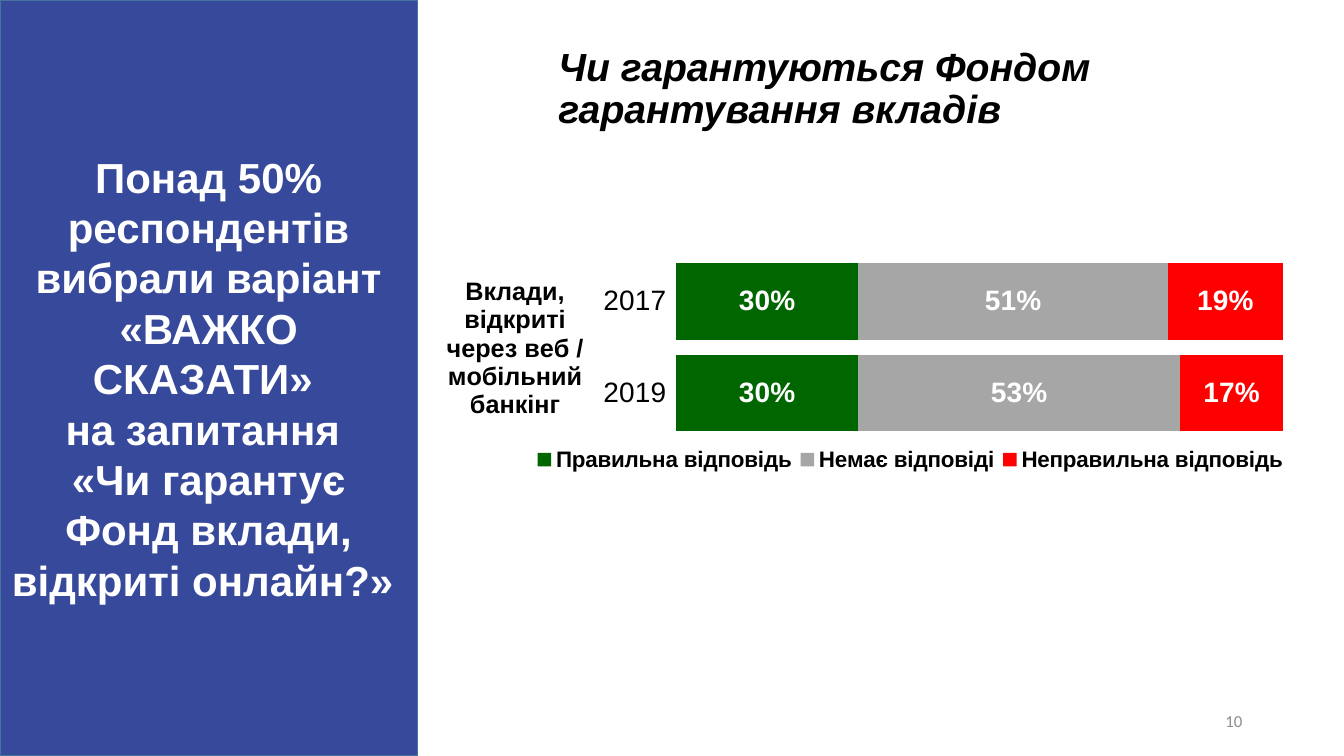
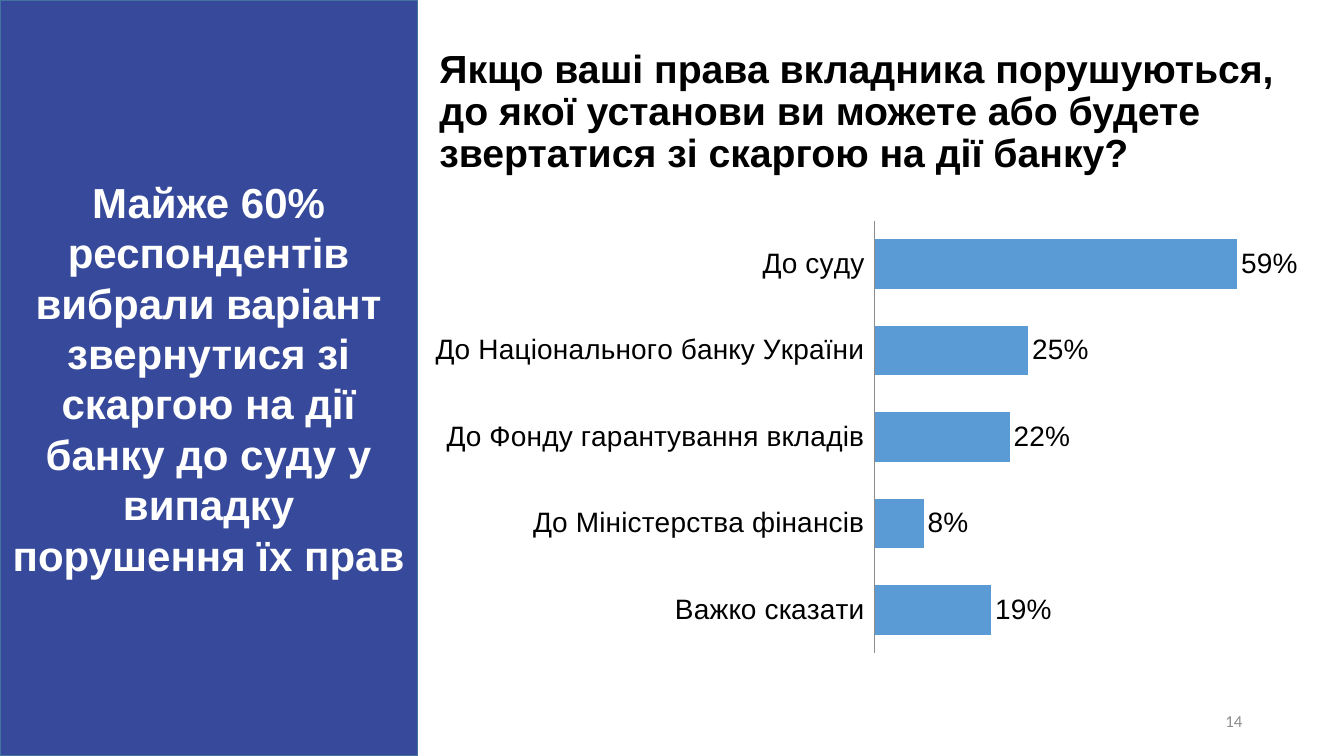
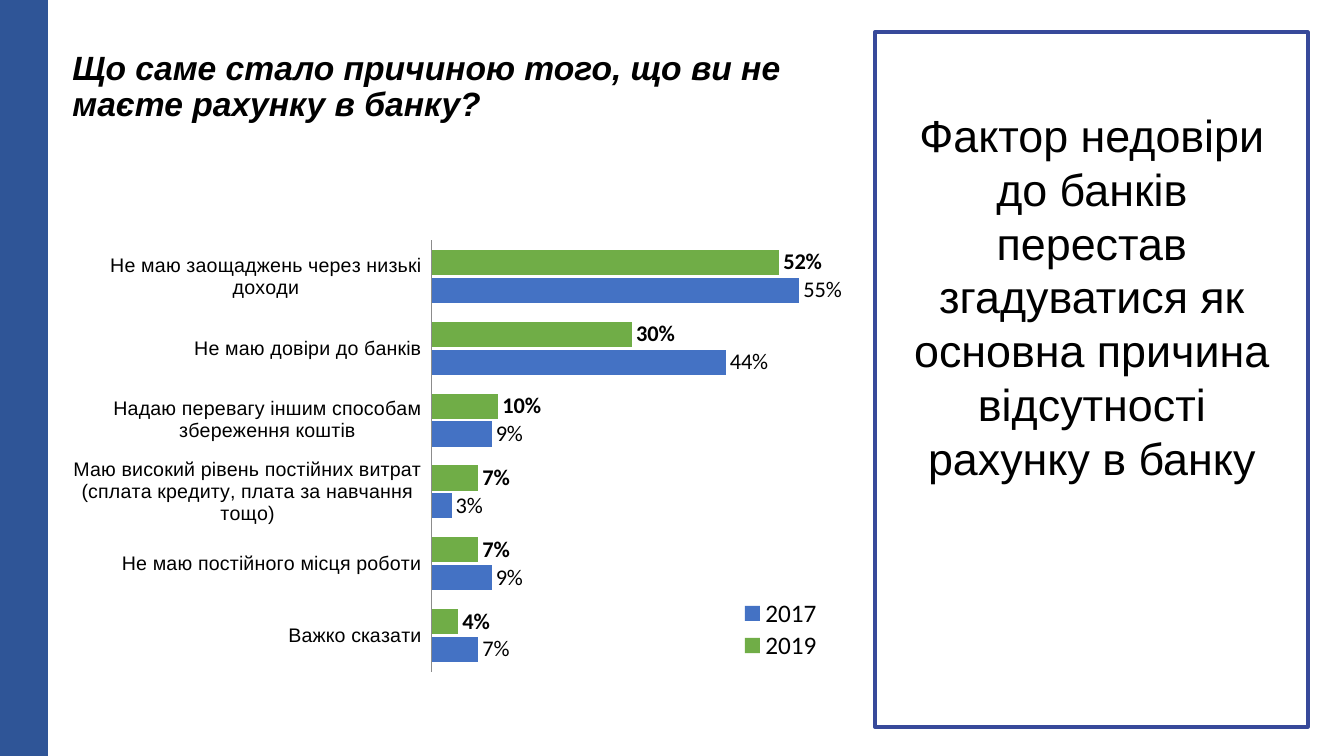
from lxml.etree import SubElement
from pptx import Presentation
from pptx.chart.data import CategoryChartData
from pptx.dml.color import RGBColor
from pptx.enum.chart import XL_CHART_TYPE as ChartType
from pptx.enum.chart import XL_LABEL_POSITION as LabelPos
from pptx.enum.chart import XL_LEGEND_POSITION as LegendPos
from pptx.enum.chart import XL_TICK_LABEL_POSITION as TickLabels
from pptx.enum.chart import XL_TICK_MARK as Tick
from pptx.enum.shapes import MSO_SHAPE as Shape
from pptx.enum.text import MSO_ANCHOR as Anchor
from pptx.enum.text import PP_ALIGN as Align
from pptx.oxml.ns import qn
from pptx.util import Inches, Pt

# Shared colours
BLACK = RGBColor(0x00, 0x00, 0x00)
WHITE = RGBColor(0xFF, 0xFF, 0xFF)
PANEL = RGBColor(0x37, 0x49, 0x9A)
PANEL_EDGE = RGBColor(0x43, 0x73, 0x9E)
STRIPE = RGBColor(0x2F, 0x55, 0x97)
MUTED = RGBColor(0x8C, 0x8C, 0x8C)
CORRECT = RGBColor(0x00, 0x66, 0x00)
NO_ANSWER = RGBColor(0xA6, 0xA6, 0xA6)
WRONG = RGBColor(0xFF, 0x00, 0x00)
LIGHT_BLUE = RGBColor(0x5B, 0x9B, 0xD5)
BLUE = RGBColor(0x44, 0x72, 0xC4)
GREEN = RGBColor(0x70, 0xAD, 0x47)

SLIDE_WIDTH, SLIDE_HEIGHT = 13.33, 7.5
PANEL_WIDTH = 4.14

# Shared text formats
TITLE = {"name": "Arial", "size": 28, "bold": True, "color": BLACK}
PANEL_TEXT = {"name": "Arial", "size": 30, "bold": True, "color": WHITE}
NUMBER = {"name": "Calibri", "size": 12, "color": MUTED}
CHART_TEXT = {"name": "Arial", "size": 20, "bold": False, "color": BLACK}


def set_font(font, values):
    for key, value in values.items():
        if key == "color":
            font.color.rgb = value
        else:
            setattr(font, key, Pt(value) if key == "size" else value)


def fill_text(frame, paragraphs, values, **layout):
    """Write paragraphs; layout holds paragraph attributes such as alignment."""
    frame.word_wrap = True
    for index, text in enumerate(paragraphs):
        para = frame.paragraphs[0] if index == 0 else frame.add_paragraph()
        para.text = text
        for key, value in layout.items():
            setattr(para, key, value)
        for span in para.runs:
            set_font(span.font, values)


def add_text(page, at, text, values, **layout):
    box = page.shapes.add_textbox(*map(Inches, at))
    fill_text(box.text_frame, [text], values, **layout)
    return box


def add_rectangle(page, at, fill, line, line_width):
    box = page.shapes.add_shape(Shape.RECTANGLE, *map(Inches, at))
    box.shadow.inherit = False
    if fill is None:
        box.fill.background()
    else:
        box.fill.solid()
        box.fill.fore_color.rgb = fill
    box.line.color.rgb = line
    box.line.width = Pt(line_width)
    return box


def add_title(page, at, text, **changes):
    add_text(page, at, text, TITLE | changes, line_spacing=0.9)


def add_side_panel(page, paragraphs):
    panel = add_rectangle(page, (0, 0, PANEL_WIDTH, SLIDE_HEIGHT), PANEL, PANEL_EDGE, 1)
    panel.text_frame.vertical_anchor = Anchor.MIDDLE
    fill_text(panel.text_frame, paragraphs, PANEL_TEXT, alignment=Align.CENTER)


def add_page_number(page, number):
    box = add_text(page, (9.42, 6.95, 3, 0.4), number, NUMBER, alignment=Align.RIGHT)
    box.text_frame.vertical_anchor = Anchor.MIDDLE


def place(part, inner=False, **position):
    """Give a chart part a manual layout in fractions of the chart."""
    layout = part.find(qn("c:layout"))
    if layout is None:
        layout = SubElement(part, qn("c:layout"))
        part.insert(0 if inner else 1, layout)
    for child in list(layout):
        layout.remove(child)
    manual = SubElement(layout, qn("c:manualLayout"))
    if inner:
        SubElement(manual, qn("c:layoutTarget")).set("val", "inner")
    for key in ("x", "y"):
        SubElement(manual, qn(f"c:{key}Mode")).set("val", "edge")
    for key, value in position.items():
        SubElement(manual, qn(f"c:{key}")).set("val", str(value))


def add_bar_chart(page, at, kind, categories, series, gap, overlap, maximum,
                  label_pos, axis_font=CHART_TEXT, axis_line=None, plot_area=None):
    """Series are (name, values, colour, label format) tuples."""
    data = CategoryChartData(number_format="0%")
    data.categories = categories
    for name, values, _, _ in series:
        data.add_series(name, values)
    chart = page.shapes.add_chart(kind, *map(Inches, at), data).chart
    chart.has_title = False
    chart.has_legend = False
    set_font(chart.font, CHART_TEXT)

    # Axes
    axis = chart.category_axis
    axis.reverse_order = True
    axis.has_major_gridlines = False
    axis.major_tick_mark = axis.minor_tick_mark = Tick.NONE
    axis.tick_label_position = TickLabels.LOW
    set_font(axis.tick_labels.font, axis_font)
    if axis_line is None:
        axis.format.line.fill.background()
    else:
        axis.format.line.color.rgb = MUTED
        axis.format.line.width = Pt(axis_line)
    scale = chart.value_axis
    scale.visible = False
    scale.has_major_gridlines = False
    scale.minimum_scale, scale.maximum_scale = 0, maximum

    # Bars and labels
    plot = chart.plots[0]
    plot.gap_width, plot.overlap = gap, overlap
    plot.vary_by_categories = False
    for bars, (_, _, color, label_font) in zip(plot.series, series):
        bars.invert_if_negative = False
        bars.format.fill.solid()
        bars.format.fill.fore_color.rgb = color
        labels = bars.data_labels
        labels.show_value = True
        labels.number_format = "0%"
        labels.number_format_is_linked = False
        labels.position = label_pos
        set_font(labels.font, label_font)
    if plot_area:
        place(plot._element.getparent(), inner=True, **plot_area)
    return chart


def add_legend(chart, side, values, **position):
    chart.has_legend = True
    chart.legend.position = side
    chart.legend.include_in_layout = False
    set_font(chart.legend.font, values)
    place(chart.legend._element, **position)


def add_axis_title(axis, text, values, **position):
    title = axis.axis_title
    fill_text(title.text_frame, [text], values)
    body = title.text_frame._txBody.bodyPr
    body.set("rot", "0")
    body.set("vert", "horz")
    place(title._element, **position)


def build_online_deposits(page):
    add_page_number(page, "10")
    add_side_panel(page, [
        "Понад 50% респондентів вибрали варіант «ВАЖКО СКАЗАТИ» ",
        "на запитання \v«Чи гарантує Фонд вклади, відкриті онлайн?» ",
    ])
    add_title(page, (5.44, 0.42, 7.96, 0.72),
              "Чи гарантуються Фондом гарантування вкладів", italic=True)
    label = CHART_TEXT | {"bold": True, "color": WHITE}
    chart = add_bar_chart(
        page, (4.3, 2.51, 8.6, 2.37), ChartType.BAR_STACKED_100, ["2017", "2019"],
        [("Правильна відповідь", (0.3, 0.3), CORRECT, label),
         ("Немає відповіді", (0.51, 0.53), NO_ANSWER, label),
         ("Неправильна відповідь", (0.19, 0.17), WRONG, label)],
        gap=20, overlap=100, maximum=1, label_pos=LabelPos.CENTER,
        plot_area={"x": 0.28, "y": 0.01, "w": 0.7, "h": 0.77})
    bold = CHART_TEXT | {"bold": True}
    add_axis_title(chart.category_axis, "Вклади, відкриті через веб / мобільний банкінг",
                   bold | {"size": 18}, x=0.01, y=0.07)
    add_legend(chart, LegendPos.BOTTOM, bold | {"size": 16}, x=0.11, y=0.8, w=0.88, h=0.13)


def build_complaints(page):
    add_page_number(page, "14")
    add_side_panel(page, ["Майже 60% респондентів вибрали варіант звернутися зі скаргою "
                          "на дії банку до суду у випадку порушення їх прав"])
    add_title(page, (4.26, 0.44, 8.72, 0.61),
              "Якщо ваші права вкладника порушуються, до якої установи ви можете "
              "або будете звертатися зі скаргою на дії банку?")
    add_bar_chart(
        page, (4.14, 2.1, 8.98, 4.47), ChartType.BAR_CLUSTERED,
        ["До суду", "До Національного банку України", "До Фонду гарантування вкладів",
         "До Міністерства фінансів", "Важко сказати"],
        [("Series 1", (0.59, 0.25, 0.22, 0.08, 0.19), LIGHT_BLUE, CHART_TEXT)],
        gap=75, overlap=-10, maximum=0.7, label_pos=LabelPos.OUTSIDE_END, axis_line=0.75)


def build_no_account(page):
    add_rectangle(page, (8.68, 0.32, 4.29, 6.89), None, PANEL, 3)
    add_text(page, (8.79, 1.02, 4.08, 3.88),
             "Фактор недовіри до банків перестав згадуватися як основна причина "
             "відсутності рахунку в банку",
             {"name": "Arial", "size": 32, "color": BLACK}, alignment=Align.CENTER)
    add_rectangle(page, (0, 0, 0.47, SLIDE_HEIGHT), STRIPE, STRIPE, 1)
    add_title(page, (0.62, 0.46, 7.5, 1.16),
              "Що саме стало причиною того, що ви не маєте рахунку в банку?",
              size=24, italic=True)
    label = CHART_TEXT | {"name": "Calibri", "size": 16}
    chart = add_bar_chart(
        page, (0.62, 2.2, 7.96, 4.65), ChartType.BAR_CLUSTERED,
        ["Не маю заощаджень через низькі доходи", "Не маю довіри до банків",
         "Надаю перевагу іншим способам збереження коштів",
         "Маю високий рівень постійних витрат (сплата кредиту, плата за навчання тощо)",
         "Не маю постійного місця роботи", "Важко сказати"],
        [("2019", (0.52, 0.3, 0.1, 0.07, 0.07, 0.04), GREEN, label | {"bold": True}),
         ("2017", (0.55, 0.44, 0.09, 0.03, 0.09, 0.07), BLUE, label)],
        gap=75, overlap=-10, maximum=0.6, label_pos=LabelPos.OUTSIDE_END,
        axis_font=CHART_TEXT | {"size": 14}, axis_line=0.5,
        plot_area={"x": 0.46, "y": 0.04, "w": 0.5, "h": 0.92})
    add_legend(chart, LegendPos.RIGHT, label | {"size": 18}, x=0.83, y=0.8, w=0.13, h=0.14)


def main():
    deck = Presentation()
    deck.slide_width, deck.slide_height = Inches(SLIDE_WIDTH), Inches(SLIDE_HEIGHT)
    for build in (build_online_deposits, build_complaints, build_no_account):
        build(deck.slides.add_slide(deck.slide_layouts[6]))
    deck.save("out.pptx")


if __name__ == "__main__":
    main()
